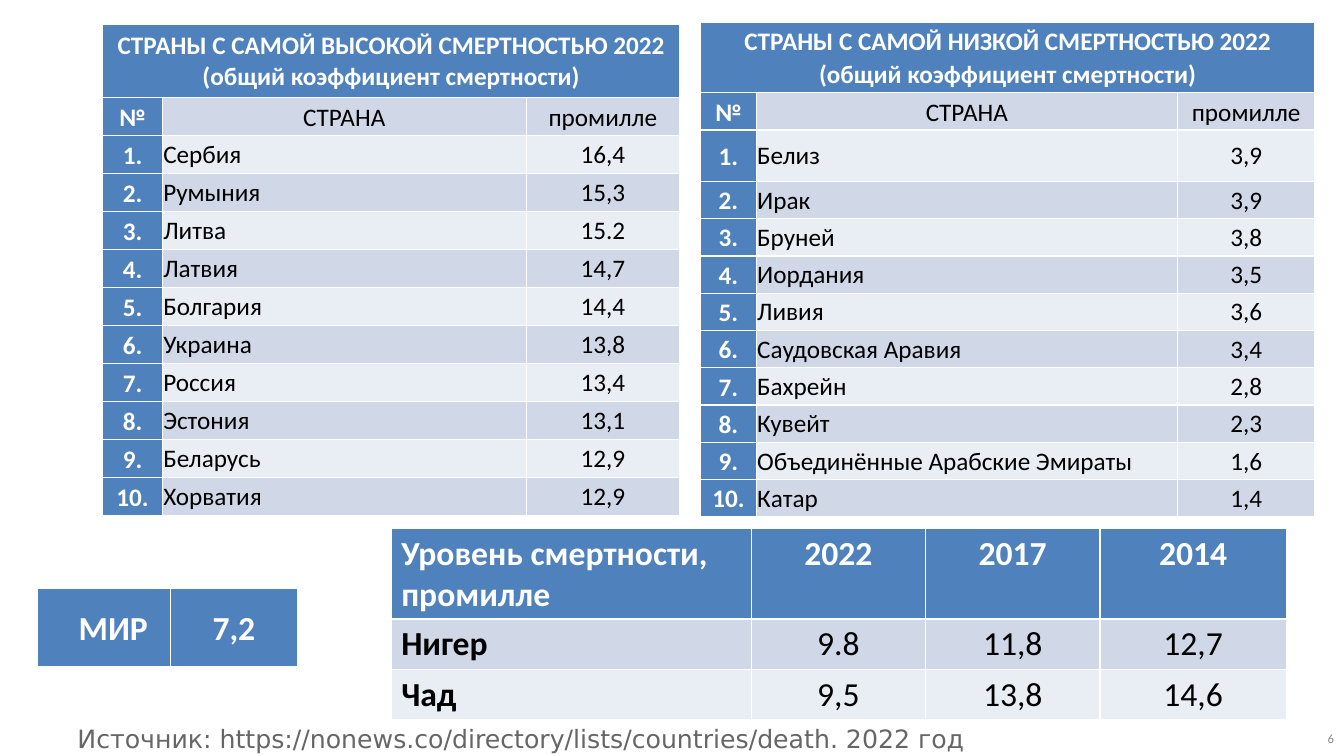
from pptx import Presentation
from pptx.dml.color import RGBColor
from pptx.enum.text import MSO_ANCHOR as Anchor, PP_ALIGN as Align
from pptx.util import Inches, Pt

BLUE, BAND, PALE = "4F81BD", "D0D8E8", "E9EDF4"
WHITE, BLACK = "FFFFFF", "000000"
TIGHT = (0.02, 0.02, 0.02, 0.02)
SNUG = (0.01, 0.01, 0.01, 0)
ROOMY = (0.1, 0.05, 0.1, 0.05)


def rgb(value):
    return RGBColor.from_string(value)


def style_text(p, size, color, bold=False, align=Align.LEFT, font="Calibri"):
    p.alignment = align
    for r in p.runs:
        r.font.name = font
        r.font.size = Pt(size)
        r.font.bold = bold
        r.font.color.rgb = rgb(color)


def fill_cell(cell, text, fill, size, color, bold=False, align=Align.CENTER,
              insets=TIGHT, anchor=Anchor.MIDDLE, spacing=None):
    cell.fill.solid()
    cell.fill.fore_color.rgb = rgb(fill)
    cell.vertical_anchor = anchor
    (cell.margin_left, cell.margin_top,
     cell.margin_right, cell.margin_bottom) = map(Inches, insets)
    cell.text_frame.text = text
    for p in cell.text_frame.paragraphs:
        style_text(p, size, color, bold, align)
        if spacing:
            p.line_spacing = spacing


def add_grid(s, left, top, widths, heights):
    box = map(Inches, (left, top, sum(widths), sum(heights)))
    table = s.shapes.add_table(len(heights), len(widths), *box).table
    for column, width in zip(table.columns, widths):
        column.width = Inches(width)
    for row, height in zip(table.rows, heights):
        row.height = Inches(height)
    return table


def add_ranking(s, left, top, widths, heights, title, title_spacing, countries):
    table = add_grid(s, left, top, widths, heights)
    table.first_col = True
    table.cell(0, 0).merge(table.cell(0, 2))
    fill_cell(table.cell(0, 0), f"{title}\n(общий коэффициент смертности)",
              BLUE, 18, WHITE, True, spacing=title_spacing)
    fill_cell(table.cell(1, 0), "№", BLUE, 18, WHITE, True, spacing=1.07)
    for col, label in enumerate(("СТРАНА", "промилле"), 1):
        fill_cell(table.cell(1, col), label, BAND, 18, BLACK, spacing=1.07)
    for i, (country, rate) in enumerate(countries, 1):
        band = PALE if i % 2 else BAND
        fill_cell(table.cell(i + 1, 0), f"{i}.", BLUE, 18, WHITE, True, spacing=1.07)
        fill_cell(table.cell(i + 1, 1), country, band, 18, BLACK,
                  align=Align.LEFT, insets=SNUG)
        fill_cell(table.cell(i + 1, 2), rate, band, 18, BLACK, insets=SNUG)


def add_world(s, left, top):
    table = add_grid(s, left, top, (1.32, 1.26), (0.77,))
    fill_cell(table.cell(0, 0), "МИР", BLUE, 24, WHITE, True, Align.LEFT, spacing=1.07)
    fill_cell(table.cell(0, 1), "7,2", BLUE, 24, WHITE, True, spacing=1.07)
    pPr = table.cell(0, 0).text_frame.paragraphs[0]._p.get_or_add_pPr()
    pPr.set("marL", str(Inches(0.39)))


def add_trend(s, left, top, rows):
    table = add_grid(s, left, top, (3.57, 1.73, 1.73, 1.85), (0.9, 0.5, 0.5))
    for i, (row, fill) in enumerate(zip(rows, (BLUE, BAND, PALE))):
        for j, text in enumerate(row):
            fill_cell(table.cell(i, j), text, fill, 24, BLACK if i else WHITE,
                      i == 0 or j == 0, Align.CENTER if j else Align.LEFT,
                      ROOMY, Anchor.TOP)


def add_note(s, box, text, size, color, align, font, anchor, wrap):
    tf = s.shapes.add_textbox(*map(Inches, box)).text_frame
    tf.word_wrap = wrap
    tf.vertical_anchor = anchor
    tf.text = text
    style_text(tf.paragraphs[0], size, color, False, align, font)


HIGHEST = (("Сербия", "16,4"), ("Румыния", "15,3"), ("Литва", "15.2"),
           ("Латвия", "14,7"), ("Болгария", "14,4"), ("Украина", "13,8"),
           ("Россия", "13,4"), ("Эстония", "13,1"), ("Беларусь", "12,9"),
           ("Хорватия", "12,9"))
LOWEST = (("Белиз", "3,9"), ("Ирак", "3,9"), ("Бруней", "3,8"),
          ("Иордания", "3,5"), ("Ливия", "3,6"), ("Саудовская Аравия", "3,4"),
          ("Бахрейн", "2,8"), ("Кувейт", "2,3"),
          ("Объединённые Арабские Эмираты", "1,6"), ("Катар", "1,4"))
TREND = (("Уровень смертности, промилле", "2022", "2017", "2014"),
         ("Нигер", "9.8", "11,8", "12,7"),
         ("Чад", "9,5", "13,8", "14,6"))


def main():
    prs = Presentation()
    prs.slide_width, prs.slide_height = Inches(13.33), Inches(7.5)
    s = prs.slides.add_slide(prs.slide_layouts[6])
    add_note(s, (10.22, 7.13, 3.11, 0.4), "6", 9, "8C8C8C",
             Align.RIGHT, "Calibri", Anchor.MIDDLE, True)
    add_ranking(s, 1.02, 0.24, (0.59, 3.61, 1.52), [0.73] + [0.377] * 11,
                "СТРАНЫ С САМОЙ ВЫСОКОЙ СМЕРТНОСТЬЮ 2022", None, HIGHEST)
    add_ranking(s, 6.95, 0.22, (0.55, 4.18, 1.36), [0.7, 0.37, 0.51] + [0.37] * 9,
                "СТРАНЫ С САМОЙ НИЗКОЙ СМЕРТНОСТЬЮ 2022", 1.07, LOWEST)
    add_note(s, (0.67, 7.13, 9.27, 0.4),
             "Источник: https://nonews.co/directory/lists/countries/death. 2022 год",
             18, "666666", Align.LEFT, "DejaVu Sans", Anchor.TOP, False)
    add_world(s, 0.37, 5.84)
    add_trend(s, 3.88, 5.24, TREND)
    prs.save("out.pptx")


if __name__ == "__main__":
    main()
